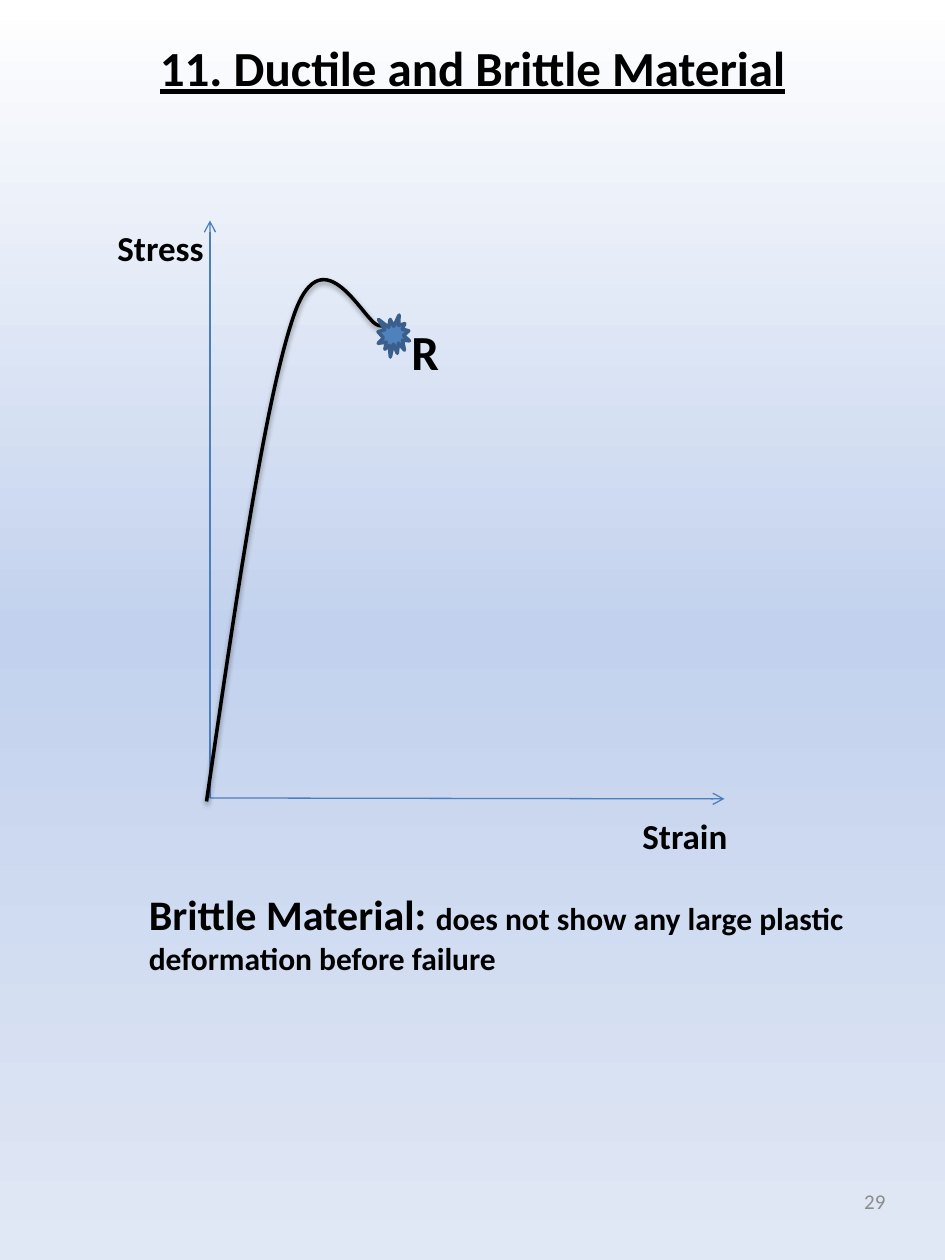
from pptx import Presentation
from pptx.dml.color import RGBColor
from pptx.enum.shapes import MSO_CONNECTOR, MSO_SHAPE
from pptx.enum.text import MSO_ANCHOR, PP_ALIGN
from pptx.oxml import parse_xml
from pptx.oxml.ns import nsdecls, qn
from pptx.util import Pt
from copy import deepcopy

LINE = MSO_CONNECTOR.STRAIGHT
BURST = MSO_SHAPE.EXPLOSION1
TOP, MID = MSO_ANCHOR.TOP, MSO_ANCHOR.MIDDLE
LEFT, MIDDLE, RIGHT = PP_ALIGN.LEFT, PP_ALIGN.CENTER, PP_ALIGN.RIGHT
FONT = "Calibri"
HEX = {"ink": "000000", "axis": "4B7EBC", "burst": "4F81BD",
       "edge": "3A5F8C", "page": "8C8C8C"}

# Content: boxes are left, top, width, height; runs are text, size
TITLE = ([("11. Ductile and Brittle Material", 28)], (0, 18, 540, 41))
NOTE = ([("Brittle Material: ", 24),
         ("does not show any large plastic deformation before failure", 18)],
        (78, 504, 462, 58))
LABELS = [
    ([("Stress", 20)], (60, 126, 72, 31.5)),
    ([("Strain", 20)], (360, 462, 72, 31.5)),
]
POINT = ([("R", 28)], (228, 180, 48, 41))
PAGE = ([("29", 12)], (387, 667.5, 126, 38))
BACK = [(0, "FFFFFF"), (0.5, "C2D1ED"), (1, "E1E8F5")]
ZERO = (120, 456)
ENDS = [(120, 126), (414, 456.5)]
SEAL = (216, 180, 18, 24)
# Start point, then two handles and an end point for each curve piece
CURVE = [(118, 458),
         (135.1, 341), (152.2, 224), (168.5, 178.6),
         (185, 133.2), (208.2, 184.2), (216.2, 186),
         (224, 187.5), (220.8, 186.5), (217.5, 186)]


def color(key):
    return RGBColor.from_string(HEX[key])


def pts(vals):
    return [Pt(v) for v in vals]


def write(runs, box, shape=None, ink="ink", bold=True, under=None,
          align=LEFT, anchor=TOP):
    if shape is None:
        shape = slide.shapes.add_textbox(*pts(box))
    shape.left, shape.top, shape.width, shape.height = pts(box)
    frame = shape.text_frame
    frame.word_wrap = True
    frame.vertical_anchor = anchor
    para = frame.paragraphs[0]
    para.alignment = align
    for text, size in runs:
        run = para.add_run()
        run.text = text
        font = run.font
        font.name, font.size = FONT, Pt(size)
        font.bold, font.underline = bold, under
        font.color.rgb = color(ink)


def stroke(shape, key, width):
    shape.line.color.rgb = color(key)
    shape.line.width = Pt(width)


def add_axis(end):
    axis = slide.shapes.add_connector(LINE, *pts(ZERO + end))
    stroke(axis, "axis", 0.75)
    axis.line._get_or_add_ln().append(
        parse_xml(f'<a:tailEnd {nsdecls("a")} type="arrow"/>'))
    axis._element.spPr.append(parse_xml(f'<a:effectLst {nsdecls("a")}/>'))


def add_curve():
    spots = [pts(p) for p in CURVE]
    build = slide.shapes.build_freeform(*spots[0])
    build.add_line_segments(spots[1:], close=False)
    curve = build.convert_to_shape()
    curve.fill.background()
    stroke(curve, "ink", 2)
    # Each three segments become one cubic curve
    path = next(curve._element.iter(qn("a:path")))
    legs = path.findall(qn("a:lnTo"))
    for i in range(0, len(legs), 3):
        cubic = parse_xml(f'<a:cubicBezTo {nsdecls("a")}/>')
        for leg in legs[i:i + 3]:
            cubic.append(leg[0])
            path.remove(leg)
        path.append(cubic)
    curve._element.spPr.append(parse_xml(
        f'<a:effectLst {nsdecls("a")}><a:outerShdw blurRad="{Pt(3.1)}" '
        f'dist="{Pt(1.6)}" dir="5400000" rotWithShape="0">'
        f'<a:srgbClr val="{HEX["ink"]}"><a:alpha val="38000"/></a:srgbClr>'
        '</a:outerShdw></a:effectLst>'))


deck = Presentation()
deck.slide_width, deck.slide_height = Pt(540), Pt(720)
slide = deck.slides.add_slide(deck.slide_layouts[5])

# Background gradient, top to bottom
fill = slide.background.fill
fill.gradient()
fill.gradient_angle = 270
stops = next(slide.element.iter(qn("a:gsLst")))
stops.append(deepcopy(stops[-1]))
for stop, (spot, tint) in zip(fill.gradient_stops, BACK):
    stop.position = spot
    stop.color.rgb = RGBColor.from_string(tint)

# Title and note
write(*TITLE, shape=slide.shapes.title, under=True, align=MIDDLE)
write(*NOTE)

# Stress-strain diagram
for end in ENDS:
    add_axis(end)
add_curve()
for label in LABELS:
    write(*label)

# Rupture point
seal = slide.shapes.add_shape(BURST, *pts(SEAL))
seal.shadow.inherit = False
seal.fill.solid()
seal.fill.fore_color.rgb = color("burst")
stroke(seal, "edge", 2)
write(*POINT)

# Page number
write(*PAGE, ink="page", bold=False, align=RIGHT, anchor=MID)

deck.save("out.pptx")
